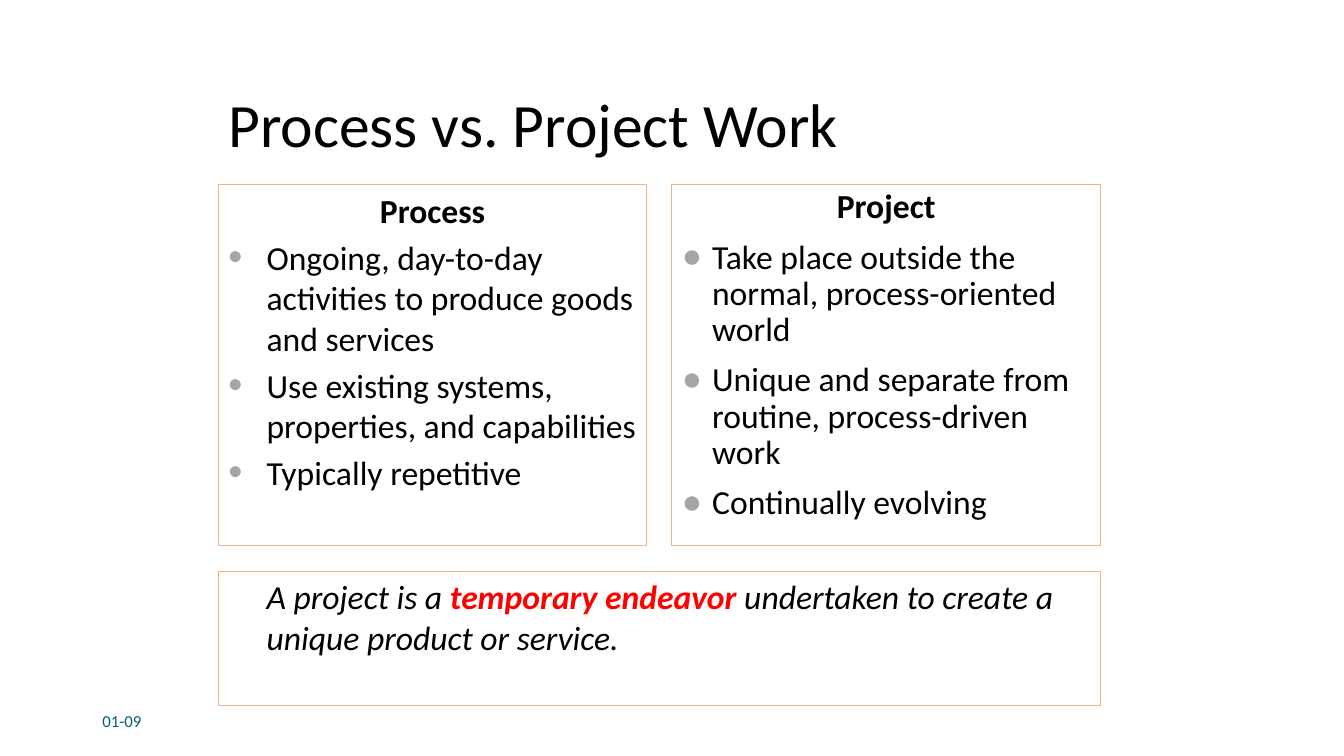
import pptx
import pptx.dml.color
import pptx.enum.shapes
import pptx.enum.text
import pptx.oxml
import pptx.oxml.ns
import pptx.util

RGB = pptx.dml.color.RGBColor
BLACK = RGB(0x00, 0x00, 0x00)
RED = RGB(0xFF, 0x00, 0x00)
TEAL = RGB(0x04, 0x5C, 0x75)
PEACH = RGB(0xF4, 0xB1, 0x83)
GRAY = RGB(0xA5, 0xA5, 0xA5)

COLS, ROWS = 160, 90
ALIGN = pptx.enum.text.PP_ALIGN
ANCHOR = pptx.enum.text.MSO_ANCHOR

# Paragraph formats of the two columns
TIGHT = {"line_spacing": 0.9, "space_before": pptx.util.Pt(10)}
LOOSE = {"space_before": pptx.util.Pt(4.8)}


class Deck:
    font = "Calibri"

    def __init__(self):
        self.show = pptx.Presentation()
        self.show.slide_width = pptx.util.Inches(13.33)
        self.show.slide_height = pptx.util.Inches(7.5)
        self.page = self.show.slides.add_slide(self.show.slide_layouts[6])

    def area(self, col, row, wide, high):
        """Turn grid cells into slide lengths."""
        dx = self.show.slide_width / COLS
        dy = self.show.slide_height / ROWS
        return [round(n) for n in (col * dx, row * dy, wide * dx, high * dy)]

    def label(self, cells, text, size, color):
        box = self.page.shapes.add_textbox(*self.area(*cells))
        frame = box.text_frame
        frame.word_wrap = True
        frame.vertical_anchor = ANCHOR.MIDDLE
        self.run(frame.paragraphs[0], text, size, color)
        return frame.paragraphs[0]

    def frame(self, cells):
        """Draw an outlined box and return its text frame."""
        box = self.page.shapes.add_shape(
            pptx.enum.shapes.MSO_SHAPE.RECTANGLE, *self.area(*cells))
        box.shadow.inherit = False
        box.fill.background()
        box.line.color.rgb = PEACH
        box.line.width = pptx.util.Pt(0.75)
        box.text_frame.word_wrap = True
        box.text_frame.vertical_anchor = ANCHOR.TOP
        return box.text_frame

    def run(self, para, text, size=24, color=BLACK, **look):
        run = para.add_run()
        run.text = text
        style = {"name": self.font, "size": pptx.util.Pt(size), **look}
        for key, value in style.items():
            setattr(run.font, key, value)
        run.font.color.rgb = color

    def format(self, para, form, left=0, hang=0):
        for key, value in form.items():
            setattr(para, key, value)
        props = para._p.get_or_add_pPr()
        props.set("marL", str(pptx.util.Inches(left)))
        props.set("indent", str(-pptx.util.Inches(hang)))

    def bullet(self, para, mark, scale):
        space = pptx.oxml.ns.nsdecls("a")
        for part in (
            f'<a:buClr {space}><a:srgbClr val="{GRAY}"/></a:buClr>',
            f'<a:buSzPct {space} val="{scale * 1000}"/>',
            f'<a:buFont {space} typeface="Arial"/>',
            f'<a:buChar {space} char="{mark}"/>',
        ):
            para._p.get_or_add_pPr().append(pptx.oxml.parse_xml(part))

    def panel(self, cells, head, items, form, hang, mark, scale):
        frame = self.frame(cells)
        top = frame.paragraphs[0]
        self.format(top, {**form, "alignment": ALIGN.CENTER}, hang, hang)
        self.run(top, head, bold=True)
        for item in items:
            para = frame.add_paragraph()
            self.format(para, {**form, "alignment": ALIGN.LEFT}, hang, hang)
            self.bullet(para, mark, scale)
            self.run(para, item)

    def quote(self, cells, parts):
        para = self.frame(cells).paragraphs[0]
        self.format(para, {**LOOSE, "alignment": ALIGN.LEFT}, 0.38)
        for text, look in parts:
            self.run(para, text, italic=True, **look)


def main():
    deck = Deck()
    title = deck.label((26, 9.25, 108, 11.75), "Process vs. Project Work",
                       44, BLACK)
    title.line_spacing = 0.9
    deck.panel((80, 22, 51, 43), "Project", [
        "Take place outside the normal, process-oriented world",
        "Unique and separate from routine, process-driven work",
        "Continually evolving",
    ], TIGHT, 0.3, "●", 100)
    deck.panel((26, 22, 51, 43), "Process", [
        "Ongoing, day-to-day activities to produce goods and services",
        "Use existing systems, properties, and capabilities",
        "Typically repetitive",
    ], LOOSE, 0.38, "•", 120)
    deck.quote((26, 68, 105, 16), [
        ("A project is a ", {}),
        ("temporary endeavor ", {"color": RED, "bold": True}),
        ("undertaken to create a unique product or service.", {}),
    ])
    deck.label((11, 83.4, 36, 4.8), "01-09", 12, TEAL)
    deck.show.save("out.pptx")


if __name__ == "__main__":
    main()
